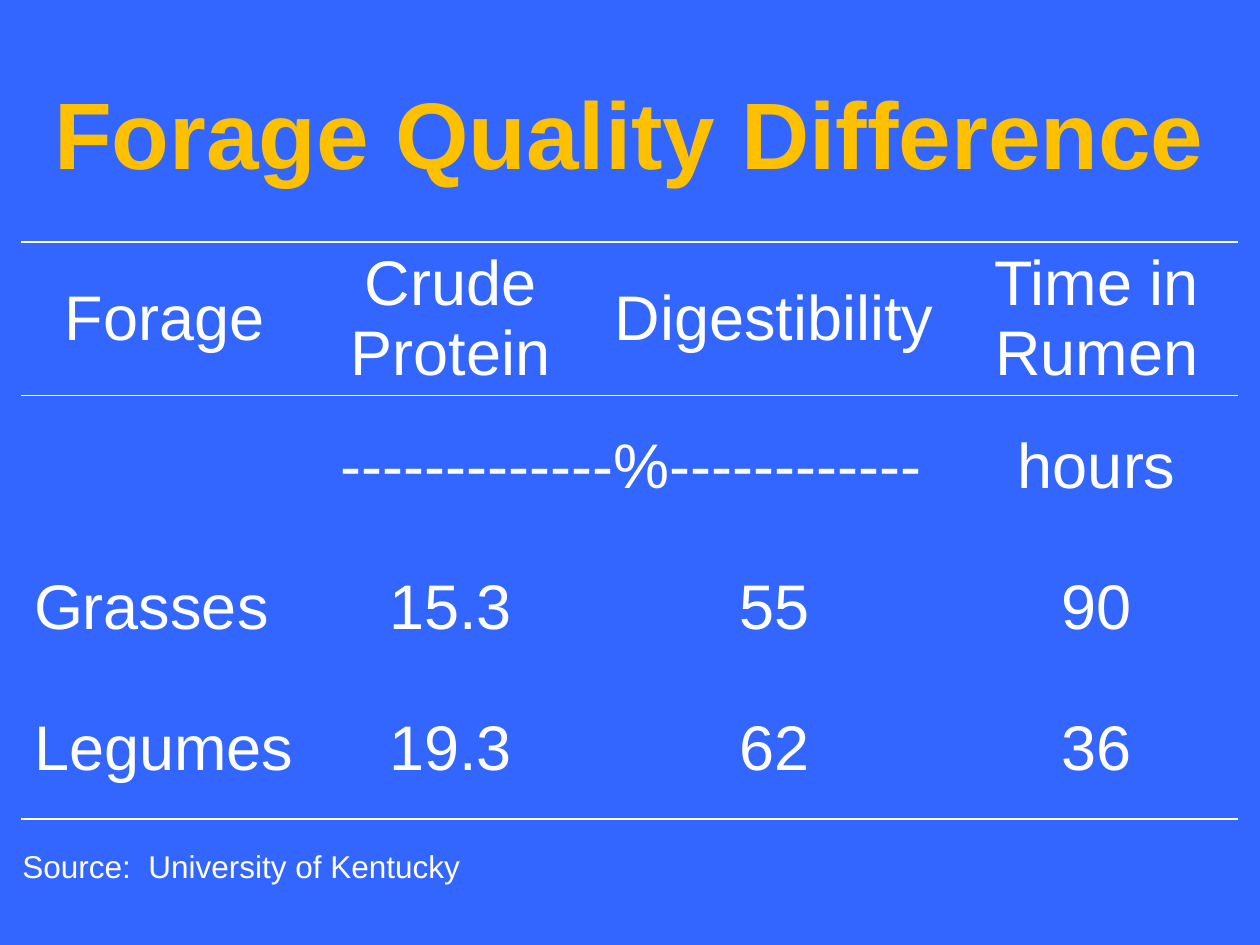
import pptx
import pptx.util
import pptx.dml.color
import pptx.enum.text
import pptx.oxml
import pptx.oxml.ns

Inches = pptx.util.Inches
Pt = pptx.util.Pt
RGBColor = pptx.dml.color.RGBColor
Align = pptx.enum.text.PP_ALIGN
Anchor = pptx.enum.text.MSO_ANCHOR

BLUE = RGBColor(0x33, 0x66, 0xFF)
GOLD = RGBColor(0xFF, 0xC0, 0x00)
WHITE = RGBColor(0xFF, 0xFF, 0xFF)

WIDTHS = [2.27, 2.27, 2.87, 2.25]
HEIGHTS = [1.22, 1.12, 1.12, 1.12]
ROWS = [
    ["Forage", "Crude Protein", "Digestibility", "Time in Rumen"],
    ["", "-------------%------------", "", "hours"],
    ["Grasses", "15.3", "55", "90"],
    ["Legumes", "19.3", "62", "36"],
]
RULED = ["TB", "T", "", "B"]


class Deck:
    font = "Arial"

    def __init__(self):
        self.file = pptx.Presentation()
        self.file.slide_width = Inches(10)
        self.file.slide_height = Inches(7.5)
        self.slide = self.file.slides.add_slide(self.file.slide_layouts[5])
        fill = self.slide.background.fill
        fill.solid()
        fill.fore_color.rgb = BLUE

    def label(self, frame, text, size, color=WHITE, align=Align.LEFT, bold=False):
        frame.text = text
        frame.word_wrap = True
        para = frame.paragraphs[0]
        para.alignment = align
        para.font.name = self.font
        para.font.size = Pt(size)
        para.font.bold = bold
        para.font.color.rgb = color

    def title(self, text, left, top, width, height):
        shape = self.slide.shapes.title
        shape.left, shape.top = Inches(left), Inches(top)
        shape.width, shape.height = Inches(width), Inches(height)
        self.label(shape.text_frame, text, 54, GOLD, Align.CENTER, True)
        shape.text_frame.vertical_anchor = Anchor.MIDDLE

    def note(self, text, left, top, width, height):
        box = self.slide.shapes.add_textbox(
            Inches(left), Inches(top), Inches(width), Inches(height))
        self.label(box.text_frame, text, 18)
        box.text_frame.auto_size = pptx.enum.text.MSO_AUTO_SIZE.SHAPE_TO_FIT_TEXT

    def border(self, cell, ruled):
        props = cell._tc.get_or_add_tcPr()
        for spot, side in enumerate("LRTB"):
            paint = "<a:noFill/>"
            if side in ruled:
                paint = f'<a:solidFill><a:srgbClr val="{WHITE}"/></a:solidFill>'
            props.insert(spot, pptx.oxml.parse_xml(
                f'<a:ln{side} {pptx.oxml.ns.nsdecls("a")} w="{Pt(1)}">{paint}</a:ln{side}>'))

    def table(self, left, top):
        frame = self.slide.shapes.add_table(
            len(ROWS), len(WIDTHS), Inches(left), Inches(top),
            Inches(sum(WIDTHS)), Inches(sum(HEIGHTS)))
        table = frame.table
        table.first_row = table.horz_banding = False
        for col, width in zip(table.columns, WIDTHS):
            col.width = Inches(width)
        for r, texts in enumerate(ROWS):
            table.rows[r].height = Inches(HEIGHTS[r])
            for c, text in enumerate(texts):
                cell = table.cell(r, c)
                align = Align.LEFT if r > 1 and c == 0 else Align.CENTER
                self.label(cell.text_frame, text, 36, align=align)
                cell.vertical_anchor = Anchor.MIDDLE
                cell.fill.background()
                self.border(cell, RULED[r])
        table.cell(1, 1).merge(table.cell(1, 2))


def main():
    deck = Deck()
    deck.title("Forage Quality Difference", 0.33, 0.42, 9.33, 1.25)
    deck.table(0.17, 1.92)
    deck.note("Source:  University of Kentucky", 0.08, 6.67, 6.08, 0.4)
    deck.file.save("out.pptx")


if __name__ == "__main__":
    main()
